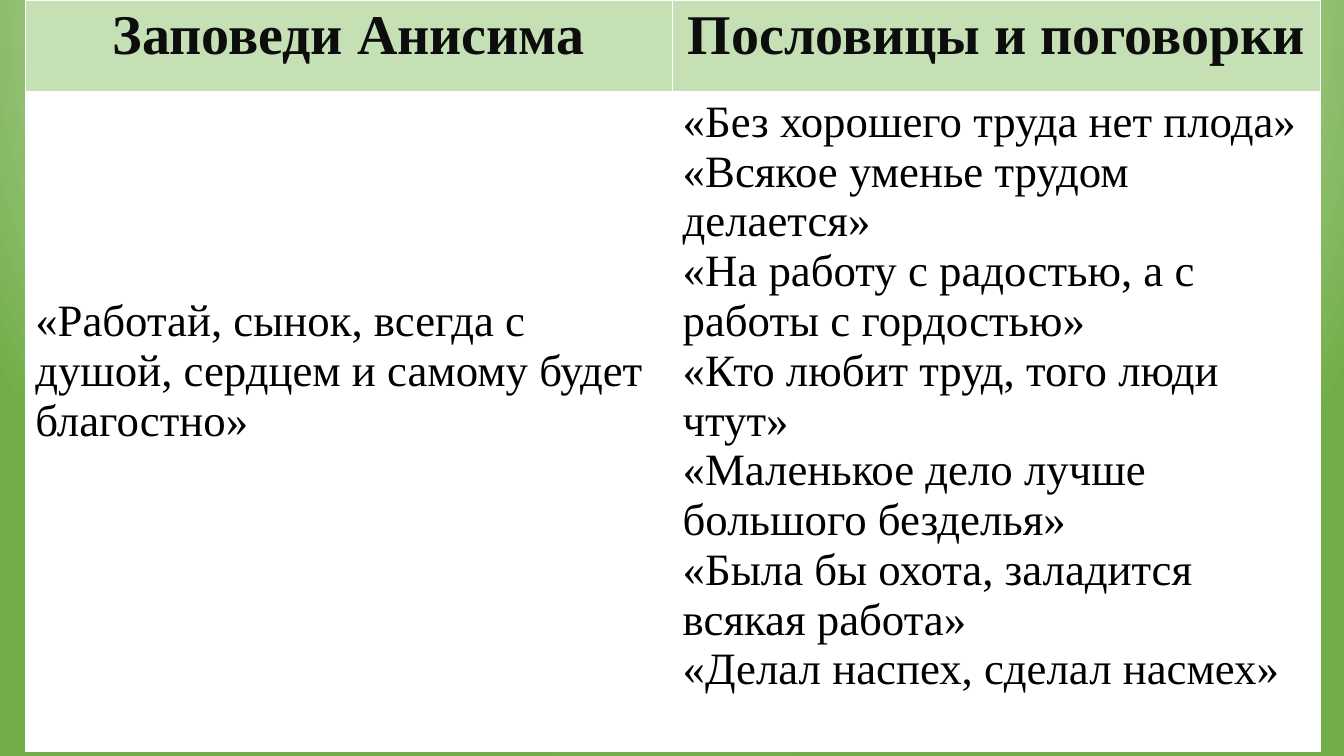
import pptx
import pptx.dml.color
import pptx.enum.text
import pptx.oxml
import pptx.oxml.ns
import pptx.util
from dataclasses import dataclass

Pt = pptx.util.Pt
RGB = pptx.dml.color.RGBColor.from_string


@dataclass(frozen=True)
class Theme:
    font: str = "Times New Roman"
    heading_size: int = 40
    body_size: int = 32
    heading_ink: str = "0D0D0D"
    body_ink: str = "000000"
    heading_fill: str = "C5E0B4"
    white: str = "FFFFFF"
    green: str = "70AD47"


theme = Theme()


def fill_cell(cell, paragraphs, size, ink, fill, bold, align):
    cell.fill.solid()
    cell.fill.fore_color.rgb = RGB(fill)
    cell.text_frame.text = "\n".join(paragraphs)
    for paragraph in cell.text_frame.paragraphs:
        paragraph.alignment = align
        paragraph.font.name = theme.font
        paragraph.font.size = Pt(size)
        paragraph.font.bold = bold
        paragraph.font.color.rgb = RGB(ink)


def add_borders(cell, bottom_width):
    widths = {"L": 1, "R": 1, "T": 1, "B": bottom_width}
    for position, (side, width) in enumerate(widths.items()):
        border = pptx.oxml.parse_xml(
            f'<a:ln{side} {pptx.oxml.ns.nsdecls("a")} w="{Pt(width)}">'
            f'<a:solidFill><a:srgbClr val="{theme.white}"/></a:solidFill></a:ln{side}>'
        )
        cell._tc.get_or_add_tcPr().insert(position, border)


presentation = pptx.Presentation()
presentation.slide_width = Pt(960)
presentation.slide_height = Pt(540)
slide = presentation.slides.add_slide(presentation.slide_layouts[6])

slide.background.fill.gradient()
linear_glow = slide.element.find(".//" + pptx.oxml.ns.qn("a:gradFill"))
stops = "".join(
    f'<a:gs pos="{percent * 1000}"><a:srgbClr val="{color}"/></a:gs>'
    for percent, color in [(0, theme.white), (35, theme.white), (100, theme.green)]
)
radial_glow = pptx.oxml.parse_xml(
    f'<a:gradFill {pptx.oxml.ns.nsdecls("a")} rotWithShape="1"><a:gsLst>{stops}</a:gsLst>'
    '<a:path path="circle"><a:fillToRect l="50000" t="-80000" r="50000" b="180000"/></a:path>'
    '</a:gradFill>'
)
linear_glow.getparent().replace(linear_glow, radial_glow)

headings = ["Заповеди Анисима", "Пословицы и поговорки"]
commandment = ["«Работай, сынок, всегда с душой, сердцем и самому будет благостно»"]
proverbs = [
    "«Без хорошего труда нет плода»",
    "«Всякое уменье трудом делается»",
    "«На работу с радостью, а с работы с гордостью»",
    "«Кто любит труд, того люди чтут»",
    "«Маленькое дело лучше большого безделья»",
    "«Была бы охота, заладится всякая работа»",
    "«Делал наспех, сделал насмех»",
]

sayings = slide.shapes.add_table(2, 2, Pt(18), Pt(0), Pt(925), Pt(537)).table
sayings.rows[0].height = Pt(66)
sayings.rows[1].height = Pt(471)

for column, (heading, lines) in enumerate(zip(headings, [commandment, proverbs])):
    heading_cell = sayings.cell(0, column)
    fill_cell(heading_cell, [heading], theme.heading_size, theme.heading_ink,
              theme.heading_fill, True, pptx.enum.text.PP_ALIGN.CENTER)
    add_borders(heading_cell, 3)
    body_cell = sayings.cell(1, column)
    fill_cell(body_cell, lines, theme.body_size, theme.body_ink,
              theme.white, False, pptx.enum.text.PP_ALIGN.LEFT)
    add_borders(body_cell, 1)

sayings.cell(1, 0).margin_top = Pt(146)

presentation.save("out.pptx")
